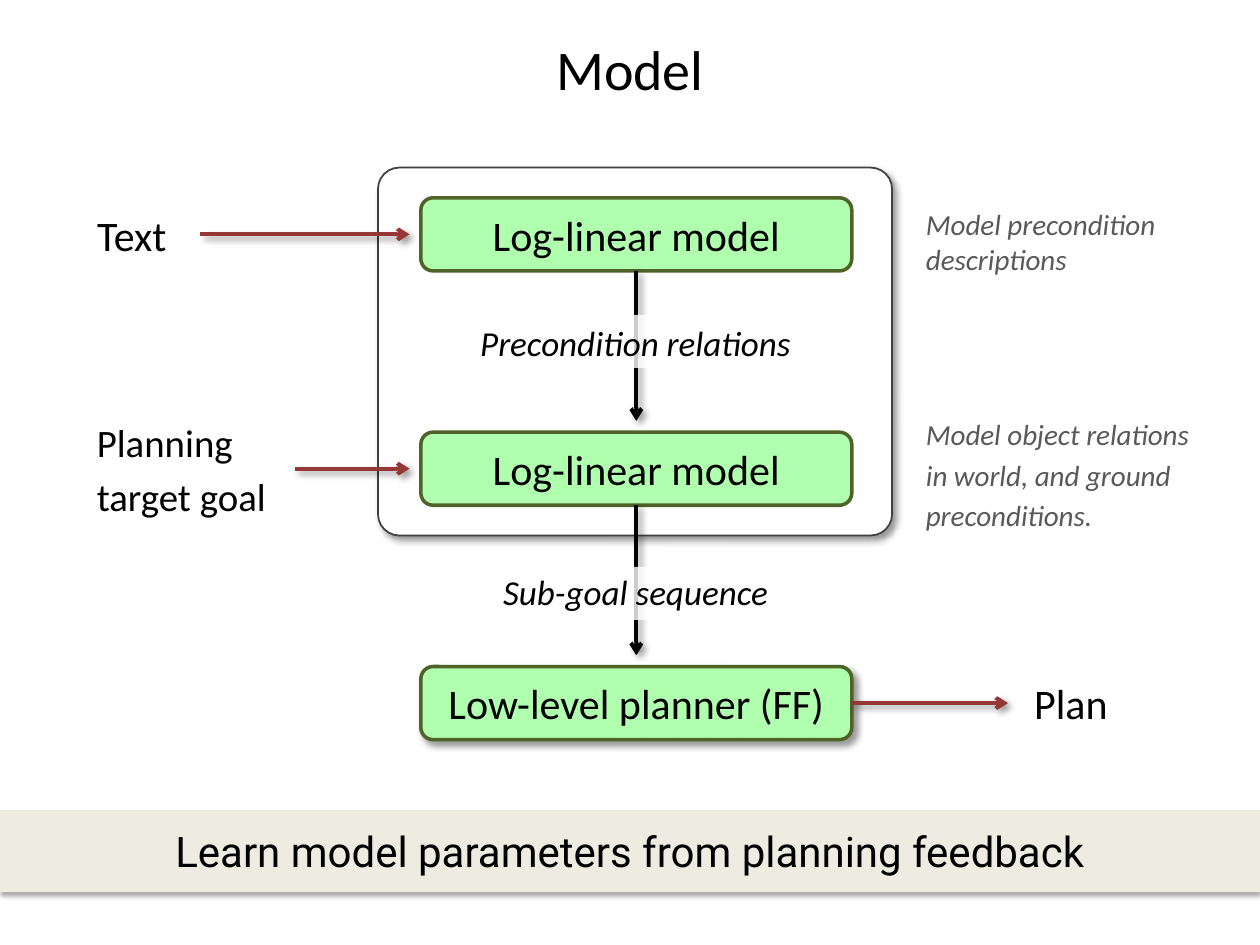
from lxml.etree import SubElement as Sub
from pptx import Presentation
from pptx.dml.color import RGBColor
from pptx.enum.shapes import MSO_CONNECTOR as Conn, MSO_SHAPE as Kind
from pptx.enum.text import MSO_ANCHOR as Anchor, MSO_AUTO_SIZE as Fit, PP_ALIGN as Align
from pptx.oxml.ns import qn
from pptx.util import Inches, Pt

TITLE = "Model"
STEPS = ["Log-linear model", "Log-linear model", "Low-level planner (FF)"]
FLOWS = [("Precondition relations", 2.5, 2.5), ("Sub-goal sequence", 4.5, 4.48)]
INPUTS = [("Text", 0.92, 0.58, 24), ("Planning\ntarget goal", 1.67, 0.88, 22.2)]
NOTES = [
    ("Model precondition descriptions", 2.75, 0.58, 0.02),
    ("Model object relations\nin world, and ground\npreconditions.", 2.5, 1.03, 0.05),
]
RESULT = "Plan"
BANNER = "Learn model parameters from planning feedback"

WIDE, HIGH = 10, 7.5
STEP = 1.86
BOX_X, BOX_W, BOX_H = 3.34, 3.42, 0.58
MID = BOX_X + BOX_W / 2
LEFT, RIGHT = 0.67, 7.25
GAP = 0.09
BLACK, WHITE, GRAY, RED = "000000", "FFFFFF", "595959", "953735"
GREEN, OLIVE, DARK, SAND = "AFFFAF", "4F6228", "404040", "EEECE1"
SOFT, FLAT = (40, 4, 3, 45), (35, 3.1, 1.8, 90)


def hue(code):
    return RGBColor.from_string(code)


def row(i):
    return STEP * (i + 1)


def place(item, x, y, w, h):
    item.left, item.top, item.width, item.height = map(Inches, (x, y, w, h))


def shade(item, look=None):
    props = item._element.spPr
    for old in props.findall(qn("a:effectLst")):
        props.remove(old)
    fx = Sub(props, qn("a:effectLst"))
    if look:
        alpha, blur, dist, turn = look
        cast = Sub(fx, qn("a:outerShdw"), blurRad=str(Pt(blur)), dist=str(Pt(dist)),
                   dir=str(turn * 60000), algn="tl", rotWithShape="0")
        tone = Sub(cast, qn("a:srgbClr"), val=BLACK)
        Sub(tone, qn("a:alpha"), val=str(alpha * 1000))


def write(item, text, size, color=BLACK, font="Calibri", align=Align.LEFT,
          anchor=Anchor.MIDDLE, italic=False, lead=0.2):
    frame = item.text_frame
    frame.text = text
    frame.word_wrap = True
    frame.auto_size = Fit.NONE
    frame.vertical_anchor = anchor
    for para in frame.paragraphs:
        para.alignment = align
        para.space_before = Pt(size * lead)
        for run in para.runs:
            run.font.size = Pt(size)
            run.font.name = font
            run.font.italic = italic
            run.font.color.rgb = hue(color)


def label(slide, x, y, w, h, text, size, **look):
    item = slide.shapes.add_textbox(*map(Inches, (x, y, w, h)))
    write(item, text, size, **look)
    return item


def block(slide, kind, x, y, w, h, fill, line=None, look=None):
    item = slide.shapes.add_shape(kind, *map(Inches, (x, y, w, h)))
    item.fill.solid()
    item.fill.fore_color.rgb = hue(fill)
    if line:
        item.line.color.rgb = hue(line[0])
        item.line.width = Pt(line[1])
    else:
        item.line.fill.background()
    shade(item, look)
    return item


def arrow(slide, start, site, x, y, color):
    item = slide.shapes.add_connector(Conn.STRAIGHT, 0, 0, Inches(x), Inches(y))
    item.begin_connect(start, site)
    item.line.color.rgb = hue(color)
    item.line.width = Pt(2.25)
    Sub(item.line._get_or_add_ln(), qn("a:tailEnd"), type="arrow")
    shade(item, SOFT)
    return item


def build():
    deck = Presentation()
    deck.slide_width, deck.slide_height = Inches(WIDE), Inches(HIGH)
    slide = deck.slides.add_slide(deck.slide_layouts[1])

    title = slide.shapes.title
    place(title, 0, 0, WIDE, 1.08)
    write(title, TITLE, 32, align=Align.CENTER, lead=0)

    panel = block(slide, Kind.ROUNDED_RECTANGLE, 3, 1.33, 4.08, 2.92, WHITE, (DARK, 1), SOFT)
    panel.adjustments[0] = 0.058

    boxes = []
    for i, text in enumerate(STEPS):
        look = SOFT if i == len(STEPS) - 1 else None
        box = block(slide, Kind.ROUNDED_RECTANGLE, BOX_X, row(i) - BOX_H / 2,
                    BOX_W, BOX_H, GREEN, (OLIVE, 2), look)
        write(box, text, 24, align=Align.CENTER)
        boxes.append(box)

    for i, (text, top, base) in enumerate(FLOWS):
        arrow(slide, boxes[i], 2, MID, row(i + 1) - BOX_H / 2 - GAP, BLACK)
        veil = block(slide, Kind.ROUNDED_RECTANGLE, 3.67, top, 2.84, 0.42, WHITE)
        tone = veil.fill._xPr.find(qn("a:solidFill"))[0]
        Sub(tone, qn("a:alpha"), val="80000")
        label(slide, 3.38, base, 3.33, BOX_H, text, 20, align=Align.CENTER,
              anchor=Anchor.TOP, italic=True)

    body = slide.placeholders[1]
    for i, (text, w, h, size) in enumerate(INPUTS):
        y = row(i) - h / 2
        if i == 0:
            item = body
            place(item, LEFT, y, w, h)
            write(item, text, size)
            props = item.text_frame.paragraphs[0]._p.get_or_add_pPr()
            props.set("marL", "0")
            props.set("indent", "0")
            Sub(props, qn("a:buNone"))
        else:
            item = label(slide, LEFT, y, w, h, text, size)
        arrow(slide, item, 3, BOX_X - GAP, row(i), RED)

    for i, (text, w, h, drop) in enumerate(NOTES):
        label(slide, RIGHT, row(i) - h / 2 + drop, w, h, text, 16.6, color=GRAY,
              anchor=Anchor.TOP, italic=True)

    plan = label(slide, 8, row(2) - BOX_H / 2, 1, BOX_H, RESULT, 24, align=Align.CENTER)
    arrow(slide, boxes[2], 3, 8, row(2), RED).end_connect(plan, 1)

    band = block(slide, Kind.RECTANGLE, 0, 6.43, WIDE, 0.65, SAND, look=FLAT)
    write(band, BANNER, 24, font="Roboto", align=Align.CENTER, lead=0)

    deck.save("out.pptx")


if __name__ == "__main__":
    build()
